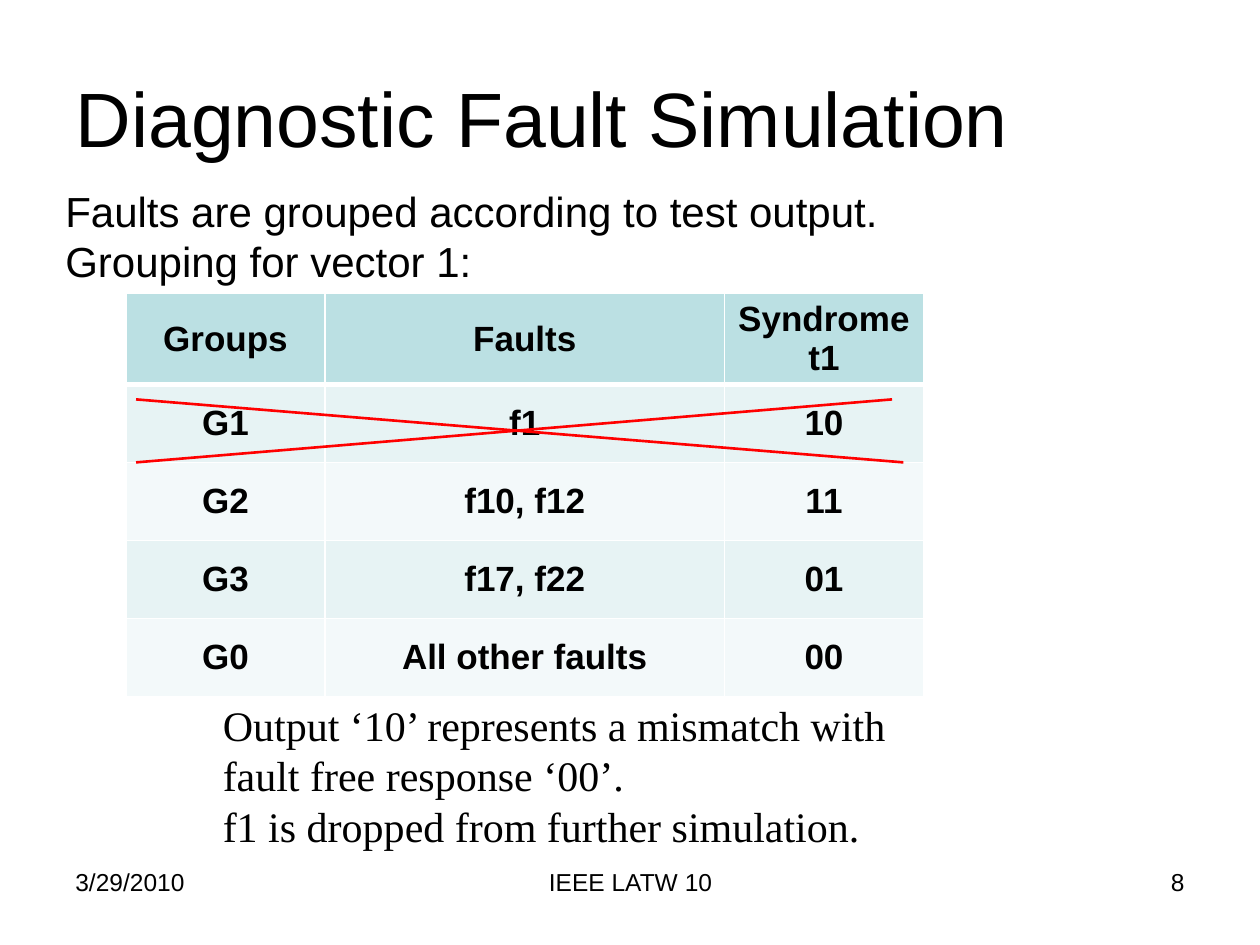
from lxml.etree import SubElement
from pptx import Presentation
from pptx.dml.color import RGBColor
from pptx.enum.shapes import MSO_CONNECTOR
from pptx.enum.text import MSO_ANCHOR, PP_ALIGN
from pptx.oxml.ns import qn
from pptx.util import Inches, Pt

COLORS = {"text": "000000", "header": "BBE0E3", "odd": "E7F3F4",
          "even": "F3F9FA", "border": "FFFFFF", "cross": "FF0000"}


def add_text(p, text, size, font="Arial", bold=False, align=PP_ALIGN.LEFT):
    p.alignment = align
    r = p.add_run()
    r.text = text
    r.font.size = Pt(size)
    r.font.name = font
    r.font.bold = bold
    r.font.color.rgb = RGBColor.from_string(COLORS["text"])


def set_border(cell, side, width):
    ln = SubElement(cell._tc.get_or_add_tcPr(), qn(f"a:ln{side}"), w=str(Pt(width)))
    fill = SubElement(ln, qn("a:solidFill"))
    SubElement(fill, qn("a:srgbClr"), val=COLORS["border"])


prs = Presentation()
prs.slide_width, prs.slide_height = Inches(10), Inches(7.5)
slide = prs.slides.add_slide(prs.slide_layouts[5])

# Title
title = slide.shapes.title
title.left, title.top = Inches(0.5), Inches(0.3)
title.width, title.height = Inches(9), Inches(1.25)
title.text_frame.vertical_anchor = MSO_ANCHOR.MIDDLE
add_text(title.text_frame.paragraphs[0], "Diagnostic Fault Simulation", 44)

# Fault group table
rows = [
    ("Groups", "Faults", "Syndrome t1"),
    ("G1", "f1", "10"),
    ("G2", "f10, f12", "11"),
    ("G3", "f17, f22", "01"),
    ("G0", "All other faults", "00"),
]
row_height = Inches(0.62)
table = slide.shapes.add_table(len(rows), 3, Inches(1), Inches(2.33),
                               Inches(6.33), row_height * len(rows)).table
table.first_row = table.horz_banding = False
for col, width in zip(table.columns, (1.58, 3.17, 1.58)):
    col.width = Inches(width)
for i, row in enumerate(rows):
    table.rows[i].height = row_height
    color = "header" if i == 0 else "odd" if i % 2 else "even"
    for j, text in enumerate(row):
        cell = table.cell(i, j)
        cell.vertical_anchor = MSO_ANCHOR.MIDDLE
        for side in "LRTB":
            header_rule = (i, side) in ((0, "B"), (1, "T"))
            set_border(cell, side, 3 if header_rule else 1)
        cell.fill.solid()
        cell.fill.fore_color.rgb = RGBColor.from_string(COLORS[color])
        add_text(cell.text_frame.paragraphs[0], text, 20, bold=True,
                 align=PP_ALIGN.CENTER)

# Cross through the dropped group
for x1, y1, x2, y2 in ((1.08, 3.17, 7.17, 3.67), (1.08, 3.67, 7.08, 3.17)):
    line = slide.shapes.add_connector(MSO_CONNECTOR.STRAIGHT, Inches(x1),
                                      Inches(y1), Inches(x2), Inches(y2))
    line.line.color.rgb = RGBColor.from_string(COLORS["cross"])
    line.line.width = Pt(1.5)
    SubElement(line._element.spPr, qn("a:effectLst"))

# Introduction, explanation and footer
texts = [
    (0.42, 1.42, 7.33, 0.91, 24, "Arial", PP_ALIGN.LEFT,
     ["Faults are grouped according to test output. Grouping for vector 1:"]),
    (1.67, 5.5, 5.83, 1.31, 24, "Times New Roman", PP_ALIGN.LEFT,
     ["Output ‘10’ represents a mismatch with fault free response ‘00’.",
      "f1 is dropped from further simulation."]),
    (0.5, 6.83, 2.33, 0.52, 14, "Arial", PP_ALIGN.LEFT, ["3/29/2010"]),
    (3.42, 6.83, 3.17, 0.52, 14, "Arial", PP_ALIGN.CENTER, ["IEEE LATW 10"]),
    (7.17, 6.83, 2.33, 0.52, 14, "Arial", PP_ALIGN.RIGHT, ["8"]),
]
for x, y, w, h, size, font, align, lines in texts:
    sp = slide.shapes.add_textbox(Inches(x), Inches(y), Inches(w), Inches(h))
    tf = sp.text_frame
    tf.word_wrap = True
    for i, text in enumerate(lines):
        p = tf.add_paragraph() if i else tf.paragraphs[0]
        add_text(p, text, size, font, align=align)

# The title reads from the left
title.text_frame.paragraphs[0].alignment = PP_ALIGN.LEFT

prs.save("out.pptx")
